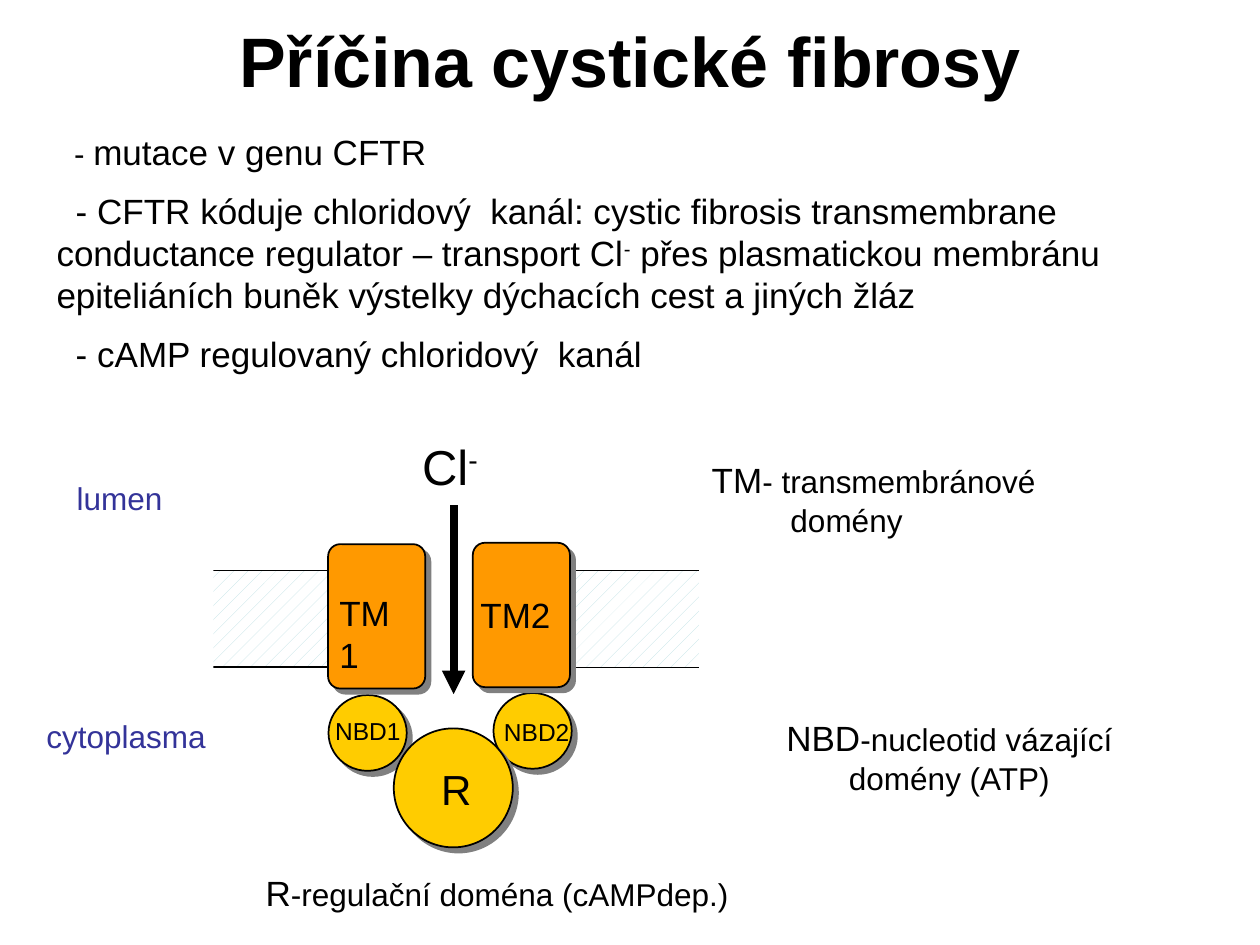
from dataclasses import dataclass

from lxml import etree
from pptx import Presentation
from pptx.dml.color import RGBColor
from pptx.enum.dml import MSO_PATTERN
from pptx.enum.shapes import MSO_CONNECTOR, MSO_SHAPE
from pptx.enum.text import MSO_ANCHOR, PP_ALIGN
from pptx.oxml.ns import qn
from pptx.util import Pt

OVAL = MSO_SHAPE.OVAL
RECTANGLE = MSO_SHAPE.RECTANGLE
ROUNDED = MSO_SHAPE.ROUNDED_RECTANGLE
STRAIGHT = MSO_CONNECTOR.STRAIGHT
DOTTED = MSO_PATTERN.PERCENT_10
LEFT, CENTER = PP_ALIGN.LEFT, PP_ALIGN.CENTER
TOP, MIDDLE = MSO_ANCHOR.TOP, MSO_ANCHOR.MIDDLE

FONT = "Arial"
COLORS = {
    "text": "000000",
    "side": "333399",
    "domain": "FF9900",
    "binding": "FFCC00",
    "membrane": "BBE0E3",
    "background": "FFFFFF",
    "shadow": "808080",
}


@dataclass(frozen=True)
class Box:
    left: float
    top: float
    width: float
    height: float

    def lengths(self) -> list:
        return [Pt(value) for value in (self.left, self.top, self.width, self.height)]


@dataclass(frozen=True)
class Span:
    text: str
    size: float
    bold: bool = False
    superscript: bool = False


@dataclass(frozen=True)
class Line:
    spans: tuple
    indent: float = 0
    space_before: float = 0


@dataclass(frozen=True)
class TextBlock:
    box: Box
    lines: tuple
    color: str = "text"
    alignment: PP_ALIGN = LEFT
    anchor: MSO_ANCHOR = TOP
    insets: tuple = (7.2, 3.6)


@dataclass(frozen=True)
class Domain:
    box: Box
    preset: MSO_SHAPE
    color: str


def rgb(name: str) -> RGBColor:
    return RGBColor.from_string(COLORS[name])


def label(left: float, top: float, width: float, height: float, *spans: Span) -> TextBlock:
    """One line of text with the narrow insets used inside the diagram."""
    return TextBlock(Box(left, top, width, height), (Line(spans),), insets=(3.6, 1.6))


def draw_text(slide, block: TextBlock) -> None:
    text_frame = slide.shapes.add_textbox(*block.box.lengths()).text_frame
    text_frame.word_wrap = True
    text_frame.vertical_anchor = block.anchor
    horizontal, vertical = block.insets
    text_frame.margin_left = text_frame.margin_right = Pt(horizontal)
    text_frame.margin_top = text_frame.margin_bottom = Pt(vertical)
    for index, line in enumerate(block.lines):
        paragraph = text_frame.add_paragraph() if index else text_frame.paragraphs[0]
        paragraph.alignment = block.alignment
        paragraph.space_before = Pt(line.space_before)
        if line.indent:
            properties = paragraph._p.get_or_add_pPr()
            properties.set("marL", "0")
            properties.set("indent", str(Pt(line.indent)))
        for span in line.spans:
            run = paragraph.add_run()
            run.text = span.text
            run.font.name = FONT
            run.font.size = Pt(span.size)
            run.font.bold = span.bold
            run.font.color.rgb = rgb(block.color)
            if span.superscript:
                run._r.get_or_add_rPr().set("baseline", "30000")


def add_outlined(slide, preset: MSO_SHAPE, box: Box):
    shape = slide.shapes.add_shape(preset, *box.lengths())
    shape.shadow.inherit = False
    shape.line.color.rgb = rgb("text")
    shape.line.width = Pt(1)
    return shape


def draw_domain(slide, domain: Domain) -> None:
    shape = add_outlined(slide, domain.preset, domain.box)
    shape.fill.solid()
    shape.fill.fore_color.rgb = rgb(domain.color)
    if domain.preset == ROUNDED:
        shape.adjustments[0] = 0.125
    effects = shape._element.spPr.find(qn("a:effectLst"))
    shadow = etree.SubElement(effects, qn("a:outerShdw"), dist=str(Pt(4.2)),
                              dir="2700000", algn="ctr", rotWithShape="0")
    etree.SubElement(shadow, qn("a:srgbClr"), val=COLORS["shadow"])


def draw_membrane(slide, box: Box) -> None:
    fill = add_outlined(slide, RECTANGLE, box).fill
    fill.patterned()
    fill.pattern = DOTTED
    fill.fore_color.rgb = rgb("membrane")
    fill.back_color.rgb = rgb("background")


def draw_open_end(slide, box: Box) -> None:
    """Cover the outer edge of a membrane so that it appears to continue."""
    shape = add_outlined(slide, RECTANGLE, box)
    shape.fill.solid()
    shape.fill.fore_color.rgb = rgb("background")
    shape.line.fill.background()


def draw_flow_arrow(slide, x: float, top: float, bottom: float) -> None:
    arrow = slide.shapes.add_connector(STRAIGHT, Pt(x), Pt(top), Pt(x), Pt(bottom))
    arrow.line.color.rgb = rgb("text")
    arrow.line.width = Pt(4.5)
    etree.SubElement(arrow.line._get_or_add_ln(), qn("a:tailEnd"), type="triangle")
    etree.SubElement(arrow._element.spPr, qn("a:effectLst"))


MEMBRANES = (Box(110, 326, 109, 55), Box(302, 326, 103.5, 55.5))
OPEN_ENDS = (Box(105, 320, 17, 64), Box(399.5, 320, 17, 85))
DOMAINS = (
    Domain(Box(282, 396, 44.7, 43.3), OVAL, "binding"),
    Domain(Box(187.7, 397.2, 44.7, 43.3), OVAL, "binding"),
    Domain(Box(225, 416.2, 68, 68), OVAL, "binding"),
    Domain(Box(187.5, 311, 55.5, 82.5), ROUNDED, "domain"),
    Domain(Box(270.2, 310.2, 55.5, 82.5), ROUNDED, "domain"),
)
TEXTS = (
    TextBlock(Box(36, 3.6, 648, 61.2), (Line((Span("Příčina cystické fibrosy", 40, bold=True),)),),
              alignment=CENTER, anchor=MIDDLE),
    TextBlock(Box(25.2, 71.3, 680.4, 170.6), (
        Line((Span("- ", 18), Span("mutace v genu CFTR", 20)), indent=10),
        Line((Span("- CFTR kóduje chloridový  kanál: cystic fibrosis transmembrane", 20),),
             indent=11, space_before=9.5),
        Line((Span("conductance regulator – transport Cl", 20), Span("-", 20, superscript=True),
              Span(" přes plasmatickou membránu epiteliáních buněk výstelky dýchacích cest"
                   " a jiných žláz", 20))),
        Line((Span("- cAMP regulovaný chloridový  kanál", 20),), indent=11, space_before=9.5),
    )),
    label(248.4, 434.9, 25.2, 31.7, Span("R", 24)),
    label(187.9, 407.5, 47, 19.4, Span("NBD1", 14)),
    label(284.4, 408.2, 47, 19.4, Span("NBD2", 14)),
    label(190.3, 336.2, 46, 50, Span("TM1", 20)),
    label(270.9, 337.7, 49.7, 27.4, Span("TM2", 20)),
    label(237.6, 247.7, 41.8, 36.7, Span("Cl", 28), Span("-", 28, superscript=True)),
    TextBlock(Box(399.6, 258.5, 210.2, 52.6), (
        Line((Span("TM", 20), Span("- transmembránové", 18))),
        Line((Span("domény", 18),), indent=45),
    )),
    TextBlock(Box(433.4, 406, 218.2, 74.2), (
        Line((Span("NBD", 20), Span("-nucleotid vázající", 18))),
        Line((Span("domény (ATP)", 18),)),
    ), alignment=CENTER),
    TextBlock(Box(144.7, 494.6, 293, 40),
              (Line((Span("R", 20), Span("-regulační doména (cAMPdep.)", 18))),)),
    TextBlock(Box(36.7, 270, 67.7, 28.8), (Line((Span("lumen", 18),)),), color="side"),
    TextBlock(Box(19.4, 406, 113.8, 28.8), (Line((Span("cytoplasma", 18),)),), color="side"),
)


def main() -> None:
    presentation = Presentation()
    presentation.slide_width, presentation.slide_height = Pt(720), Pt(540)
    slide = presentation.slides.add_slide(presentation.slide_layouts[6])
    for membrane in MEMBRANES:
        draw_membrane(slide, membrane)
    for open_end in OPEN_ENDS:
        draw_open_end(slide, open_end)
    for domain in DOMAINS:
        draw_domain(slide, domain)
    draw_flow_arrow(slide, x=259.2, top=288.7, bottom=396.7)
    for block in TEXTS:
        draw_text(slide, block)
    presentation.save("out.pptx")


if __name__ == "__main__":
    main()
